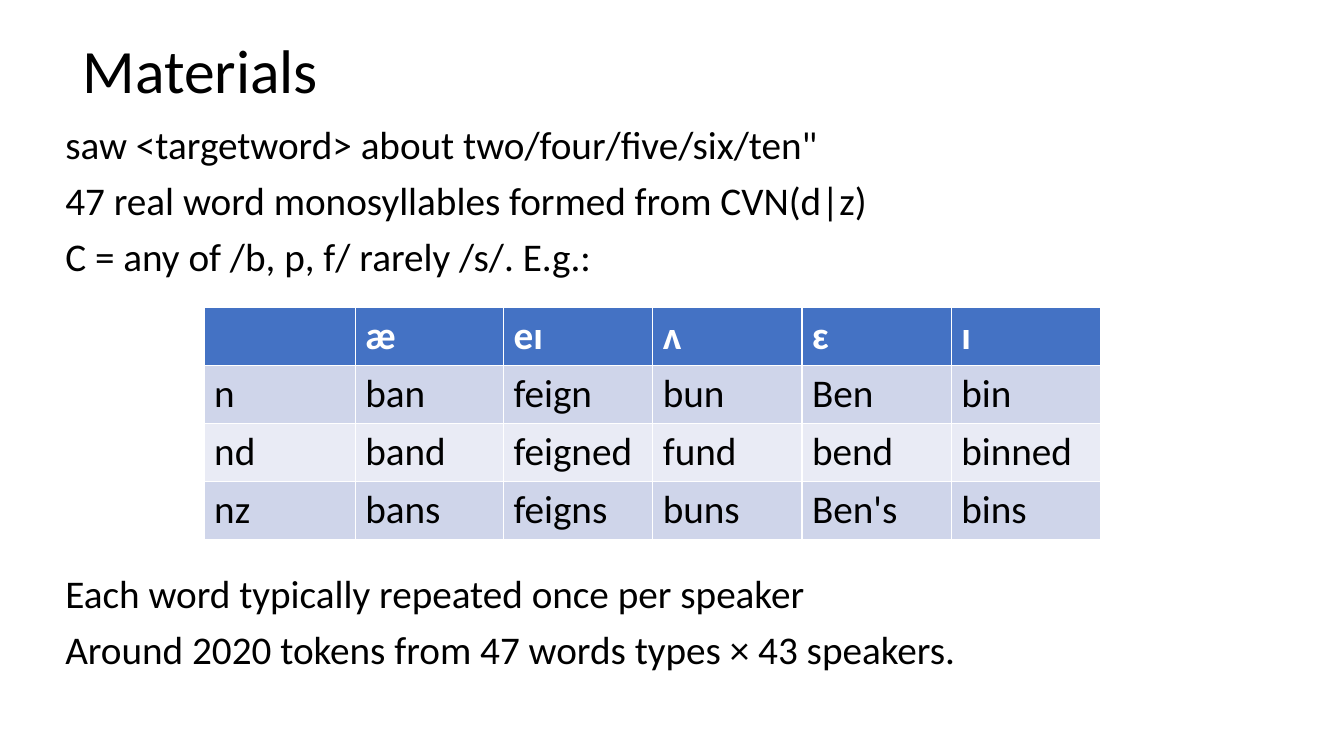
from pptx import Presentation
from pptx.dml.color import RGBColor
from pptx.enum.text import MSO_ANCHOR
from pptx.util import Pt

MIDDLE, TOP = MSO_ANCHOR.MIDDLE, MSO_ANCHOR.TOP
BLACK = RGBColor(0x00, 0x00, 0x00)
WHITE = RGBColor(0xFF, 0xFF, 0xFF)
HEADER_BLUE = RGBColor(0x44, 0x72, 0xC4)
BAND_DARK = RGBColor(0xCF, 0xD5, 0xEA)
BAND_LIGHT = RGBColor(0xE9, 0xEB, 0xF5)
FONT = "Calibri"

LINE_GAP = 9.5
TABLE_GAP = 210.7  # leaves room for the table between the body lines
BODY = [
    ('saw <targetword> about two/four/five/six/ten"', 0),
    ("47 real word monosyllables formed from CVN(d|z)", LINE_GAP),
    ("C = any of /b, p, f/ rarely /s/. E.g.:", LINE_GAP),
    ("Each word typically repeated once per speaker", TABLE_GAP),
    ("Around 2020 tokens from 47 words types × 43 speakers.", LINE_GAP),
]
WORDS = [
    ["", "æ", "eɪ", "ʌ", "ɛ", "ɪ"],
    ["n", "ban", "feign", "bun", "Ben", "bin"],
    ["nd", "band", "feigned", "fund", "bend", "binned"],
    ["nz", "bans", "feigns", "buns", "Ben's", "bins"],
]
COLUMN_WIDTHS = [108, 105.9] + [106.6] * 4
ROW_HEIGHT = 41.4


def style_font(p, size, color, bold=False):
    p.font.name = FONT
    p.font.size = Pt(size)
    p.font.color.rgb = color
    p.font.bold = bold


def add_text(slide, left, top, width, height, anchor, lines, size):
    """Add a text box from (text, space before) pairs."""
    box = slide.shapes.add_textbox(Pt(left), Pt(top), Pt(width), Pt(height))
    tf = box.text_frame
    tf.word_wrap = True
    tf.vertical_anchor = anchor
    for i, (text, gap) in enumerate(lines):
        p = tf.add_paragraph() if i else tf.paragraphs[0]
        p.text = text
        p.line_spacing = 0.9
        p.space_before = Pt(gap)
        style_font(p, size, BLACK)


prs = Presentation()
prs.slide_width, prs.slide_height = Pt(960), Pt(540)
s = prs.slides.add_slide(prs.slide_layouts[6])

add_text(s, 52, 0, 828, 104.4, MIDDLE, [("Materials", 0)], 44)
add_text(s, 39.6, 86.4, 828, 342.7, TOP, BODY, 28)

# The default table style supplies the white cell borders
table = s.shapes.add_table(
    len(WORDS), len(COLUMN_WIDTHS), Pt(145.8), Pt(219.6),
    Pt(sum(COLUMN_WIDTHS)), Pt(ROW_HEIGHT * len(WORDS))).table
for column, width in zip(table.columns, COLUMN_WIDTHS):
    column.width = Pt(width)
for i, row in enumerate(WORDS):
    table.rows[i].height = Pt(ROW_HEIGHT)
    header = i == 0
    fill = HEADER_BLUE if header else BAND_DARK if i % 2 else BAND_LIGHT
    for j, word in enumerate(row):
        cell = table.cell(i, j)
        cell.fill.solid()
        cell.fill.fore_color.rgb = fill
        cell.text = word
        style_font(cell.text_frame.paragraphs[0], 28,
                   WHITE if header else BLACK, header)

prs.save("out.pptx")
